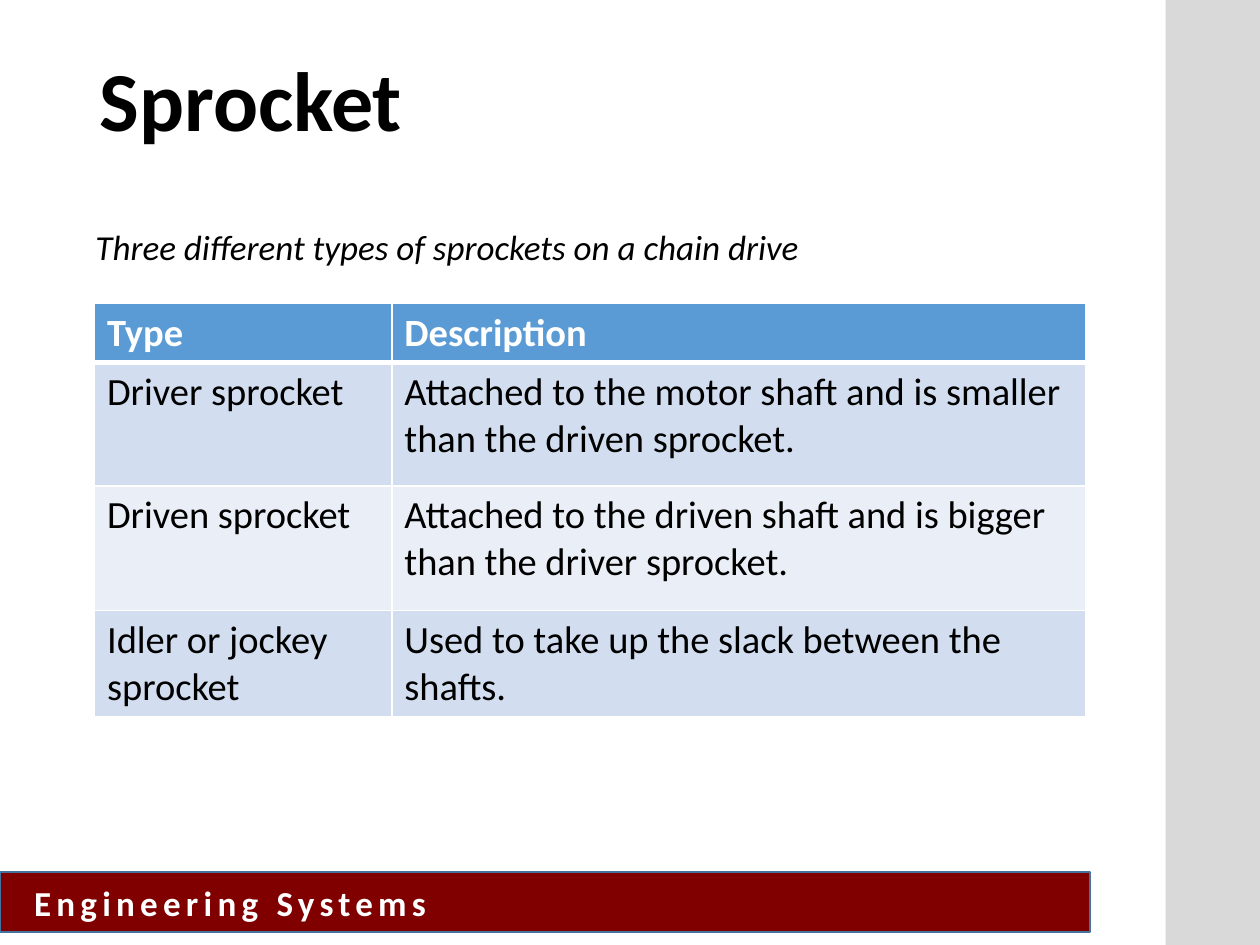
from lxml import etree
from pptx import Presentation
from pptx import util as u
from pptx.dml.color import RGBColor
from pptx.enum import shapes, text
from pptx.oxml import ns

COLORS = {
    "black": "000000",
    "white": "FFFFFF",
    "maroon": "800000",
    "footer line": "43739E",
    "gray": "D9D9D9",
    "header": "5B9BD5",
    "odd row": "D2DEEF",
    "even row": "EAEFF7",
}


def format_text(frame, size, color, bold=False, italic=False):
    paragraph = frame.paragraphs[0]
    paragraph.alignment = text.PP_ALIGN.LEFT
    font = paragraph.runs[0].font
    font.name = "Calibri"
    font.size = u.Pt(size)
    font.bold = bold
    font.italic = italic
    font.color.rgb = RGBColor.from_string(COLORS[color])


def add_border(cell, side, width):
    line = etree.SubElement(cell._tc.get_or_add_tcPr(), ns.qn(f"a:ln{side}"), w=str(u.Pt(width)))
    fill = etree.SubElement(line, ns.qn("a:solidFill"))
    etree.SubElement(fill, ns.qn("a:srgbClr"), val=COLORS["white"])


presentation = Presentation()
presentation.slide_width = u.Inches(10)
presentation.slide_height = u.Inches(7.5)
slide = presentation.slides.add_slide(presentation.slide_layouts.get_by_name("Title Only"))

bars = []
for left, top, width, height, color in [
    (0, 6.92, 8.65, 0.48, "maroon"),
    (9.25, 0, 0.75, 7.5, "gray"),
]:
    bar = slide.shapes.add_shape(
        shapes.MSO_SHAPE.RECTANGLE, u.Inches(left), u.Inches(top), u.Inches(width), u.Inches(height)
    )
    bar.shadow.inherit = False
    bar.fill.solid()
    bar.fill.fore_color.rgb = RGBColor.from_string(COLORS[color])
    bar.line.fill.background()
    bars.append(bar)

footer = bars[0]
footer.line.color.rgb = RGBColor.from_string(COLORS["footer line"])
footer.line.width = u.Pt(1)
footer.text_frame.text = "Engineering Systems"
footer.text_frame.margin_left = u.Inches(0.27)
footer.text_frame.vertical_anchor = text.MSO_ANCHOR.MIDDLE
format_text(footer.text_frame, 20, "white", bold=True)
footer.text_frame.paragraphs[0].runs[0].font._element.set("spc", "300")

title = slide.shapes.title
title.left, title.top = u.Inches(0.69), u.Inches(0.1)
title.width, title.height = u.Inches(8.44), u.Inches(1.45)
title.text_frame.text = "Sprocket"
title.text_frame.vertical_anchor = text.MSO_ANCHOR.MIDDLE
title.text_frame.paragraphs[0].line_spacing = 0.9
format_text(title.text_frame, 48, "black", bold=True)

subtitle = slide.shapes.add_textbox(u.Inches(0.66), u.Inches(1.78), u.Inches(8.44), u.Inches(0.49))
subtitle.text_frame.word_wrap = True
subtitle.text_frame.text = "Three different types of sprockets on a chain drive"
subtitle.text_frame.paragraphs[0].line_spacing = 0.9
format_text(subtitle.text_frame, 20, "black", italic=True)

sprockets = [
    ("Type", "Description"),
    ("Driver sprocket", "Attached to the motor shaft and is smaller than the driven sprocket."),
    ("Driven sprocket", "Attached to the driven shaft and is bigger than the driver sprocket."),
    ("Idler or jockey sprocket", "Used to take up the slack between the shafts."),
]
column_widths = [2.36, 5.51]
row_heights = [0.46, 0.98, 0.99, 0.84]
table = slide.shapes.add_table(
    len(sprockets), len(column_widths), u.Inches(0.75), u.Inches(2.41),
    u.Inches(sum(column_widths)), u.Inches(sum(row_heights)),
).table
for column, width in zip(table.columns, column_widths):
    column.width = u.Inches(width)

row_fills = ["header", "odd row", "even row", "odd row"]
for row_index, (row, height, values, fill) in enumerate(
    zip(table.rows, row_heights, sprockets, row_fills)
):
    row.height = u.Inches(height)
    is_header = row_index == 0
    for cell, value in zip(row.cells, values):
        cell.text_frame.text = value
        format_text(cell.text_frame, 22, "white" if is_header else "black", bold=is_header)
        for side in "LRTB":
            thick = (is_header and side == "B") or (row_index == 1 and side == "T")
            add_border(cell, side, 3 if thick else 1)
        cell.fill.solid()
        cell.fill.fore_color.rgb = RGBColor.from_string(COLORS[fill])

presentation.save("out.pptx")
